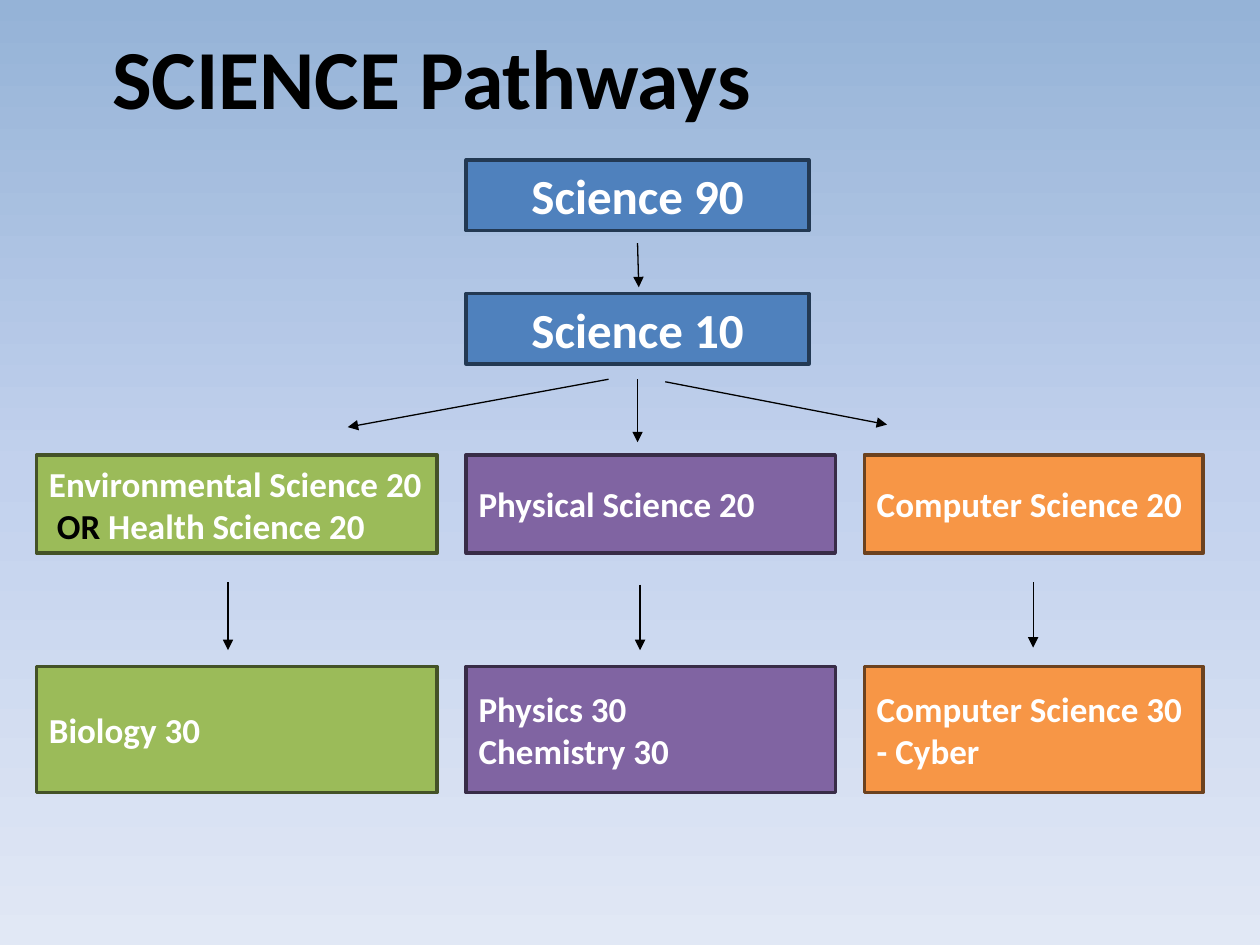
from copy import deepcopy

from lxml import etree
from pptx import Presentation
from pptx.dml.color import RGBColor
from pptx.enum.shapes import MSO_CONNECTOR, MSO_SHAPE
from pptx.enum.text import MSO_ANCHOR, MSO_AUTO_SIZE, PP_ALIGN
from pptx.oxml.ns import qn
from pptx.util import Inches, Pt

RECT, STRAIGHT = MSO_SHAPE.RECTANGLE, MSO_CONNECTOR.STRAIGHT
LEFT, CENTER = PP_ALIGN.LEFT, PP_ALIGN.CENTER
MIDDLE, BOTTOM = MSO_ANCHOR.MIDDLE, MSO_ANCHOR.BOTTOM
BLACK, WHITE = RGBColor(0, 0, 0), RGBColor(255, 255, 255)
BLUE, BLUE_EDGE = RGBColor(0x4F, 0x81, 0xBD), RGBColor(0x23, 0x39, 0x53)
GREEN, GREEN_EDGE = RGBColor(0x9B, 0xBB, 0x59), RGBColor(0x44, 0x52, 0x27)
PURPLE, PURPLE_EDGE = RGBColor(0x80, 0x64, 0xA2), RGBColor(0x38, 0x2C, 0x47)
ORANGE, ORANGE_EDGE = RGBColor(0xF7, 0x96, 0x46), RGBColor(0x6C, 0x42, 0x1F)
SKY = [(0, RGBColor(0x95, 0xB3, 0xD7)), (0.5, RGBColor(0xC2, 0xD1, 0xED)),
       (1, RGBColor(0xE1, 0xE8, 0xF5))]


def write(sp, lines, size=20, color=WHITE, align=LEFT, anchor=MIDDLE):
    """Fill a shape with paragraphs; each line is a list of (text, color or None) runs."""
    tf = sp.text_frame
    tf.word_wrap = True
    tf.auto_size = MSO_AUTO_SIZE.NONE
    tf.vertical_anchor = anchor
    for i, runs in enumerate(lines):
        p = tf.add_paragraph() if i else tf.paragraphs[0]
        p.alignment = align
        for text, run_color in runs:
            r = p.add_run()
            r.text = text
            r.font.name, r.font.size, r.font.bold = "Calibri", Pt(size), True
            r.font.color.rgb = run_color or color


def add_box(x, y, w, h, fill, edge, lines, **text_format):
    sp = slide.shapes.add_shape(RECT, Inches(x), Inches(y), Inches(w), Inches(h))
    sp.shadow.inherit = False
    sp.fill.solid()
    sp.fill.fore_color.rgb = fill
    sp.line.color.rgb = edge
    sp.line.width = Pt(2)
    write(sp, lines, **text_format)


prs = Presentation()
prs.slide_width, prs.slide_height = Inches(10), Inches(7.5)
slide = prs.slides.add_slide(prs.slide_layouts[5])

# Background gradient, top to bottom
fill = slide.background.fill
fill.gradient()
fill.gradient_angle = 270
stop_list = slide.element.xpath(".//a:gsLst")[0]
stop_list.append(deepcopy(stop_list[0]))
for stop, (position, color) in zip(fill.gradient_stops, SKY):
    stop.position = position
    stop.color.rgb = color

title = slide.shapes.title
title.left, title.top = Inches(0.79), Inches(0.37)
title.width, title.height = Inches(8.5), Inches(0.68)
write(title, [[("SCIENCE Pathways", None)]], size=48, color=BLACK, anchor=BOTTOM)

# Shared courses
for y, course in [(1.27, "Science 90"), (2.33, "Science 10")]:
    add_box(3.7, y, 2.72, 0.56, BLUE, BLUE_EDGE, [[(course, None)]], size=28, align=CENTER)

# One column per pathway: left, width, colours, level 20 lines, level 30 lines
pathways = [
    (0.29, 3.18, GREEN, GREEN_EDGE,
     [[("Environmental Science 20", None)],
      [(" ", None), ("OR", BLACK), (" Health Science 20", None)]],
     [[("Biology 30", None)]]),
    (3.7, 2.93, PURPLE, PURPLE_EDGE,
     [[("Physical Science 20", None)]],
     [[("Physics 30", None)], [("Chemistry 30", None)]]),
    (6.86, 2.69, ORANGE, ORANGE_EDGE,
     [[("Computer Science 20", None)]],
     [[("Computer Science 30 - Cyber", None)]]),
]
for x, w, color, edge, level_20, level_30 in pathways:
    add_box(x, 3.61, w, 0.78, color, edge, level_20)
    add_box(x, 5.29, w, 1, color, edge, level_30)

# Arrows between the levels
arrows = [
    (5.06, 1.93, 5.07, 2.28),
    (5.06, 3.01, 5.06, 3.51), (4.83, 3.01, 2.76, 3.39), (5.28, 3.03, 7.04, 3.37),
    (1.81, 4.62, 1.81, 5.16), (5.08, 4.64, 5.08, 5.16), (8.2, 4.62, 8.2, 5.14),
]
for ends in arrows:
    arrow = slide.shapes.add_connector(STRAIGHT, *map(Inches, ends))
    arrow.line.color.rgb = BLACK
    arrow.line.width = Pt(0.75)
    etree.SubElement(arrow.line._get_or_add_ln(), qn("a:tailEnd"), type="triangle")
    etree.SubElement(arrow._element.spPr, qn("a:effectLst"))

prs.save("out.pptx")
